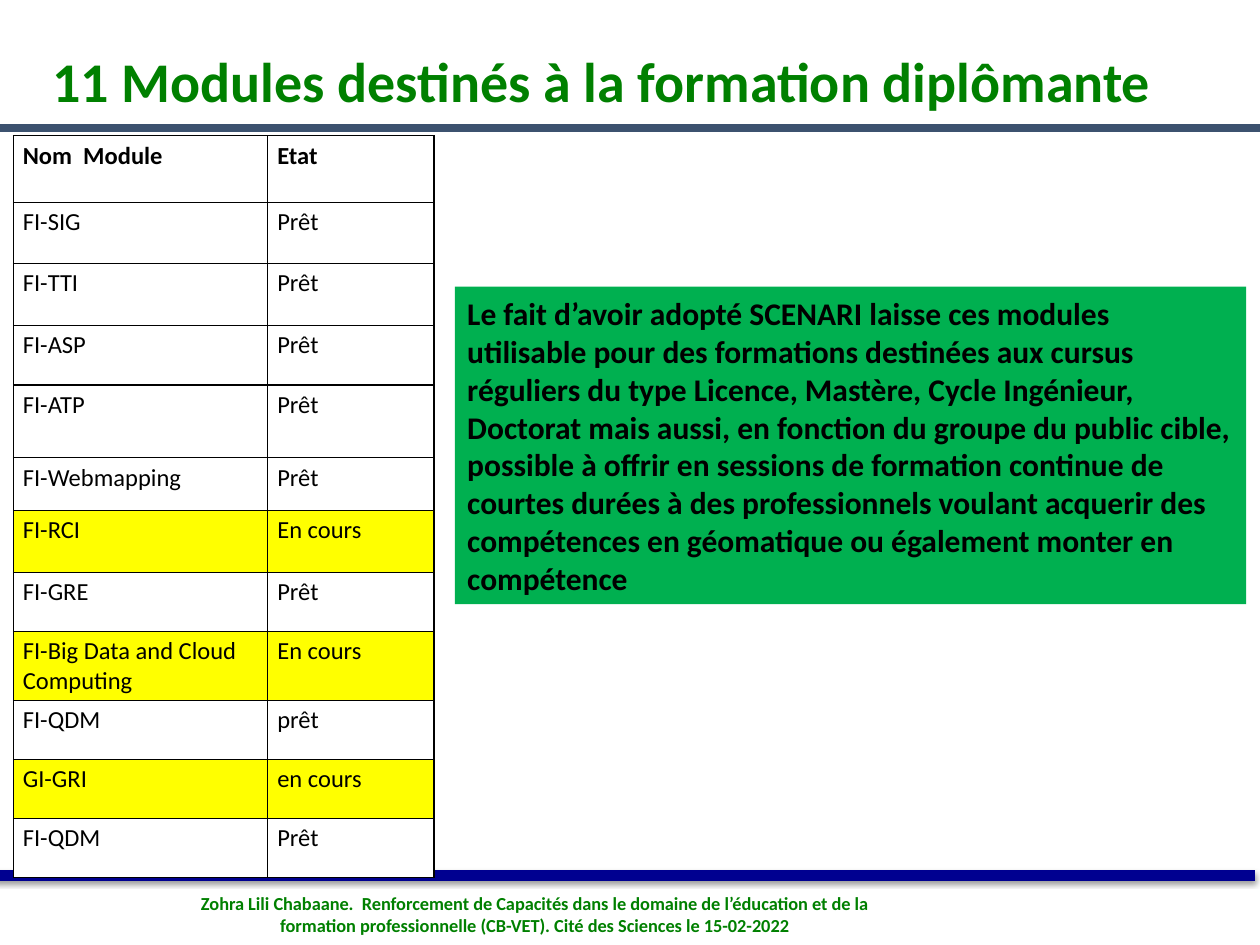
from typing import NamedTuple

from lxml import etree
from pptx import Presentation
from pptx.dml.color import RGBColor
from pptx.enum.shapes import MSO_CONNECTOR, MSO_SHAPE
from pptx.enum.text import MSO_ANCHOR, PP_ALIGN
from pptx.oxml import parse_xml
from pptx.oxml.ns import nsdecls, qn
from pptx.util import Cm, Pt

STRAIGHT = MSO_CONNECTOR.STRAIGHT
RECTANGLE = MSO_SHAPE.RECTANGLE
LEFT, CENTER = PP_ALIGN.LEFT, PP_ALIGN.CENTER
TOP, MIDDLE = MSO_ANCHOR.TOP, MSO_ANCHOR.MIDDLE

BLACK = RGBColor(0x00, 0x00, 0x00)
WHITE = RGBColor(0xFF, 0xFF, 0xFF)
YELLOW = RGBColor(0xFF, 0xFF, 0x00)
DARK_GREEN = RGBColor(0x00, 0x80, 0x00)
BOX_GREEN = RGBColor(0x00, 0xB0, 0x50)
NAVY = RGBColor(0x00, 0x00, 0x90)
SLATE = RGBColor(0x3C, 0x52, 0x6F)

FONT = "Calibri"
COLUMN_WIDTHS = (5.13, 3.35)

TITLE = "11 Modules destinés à la formation diplômante"
FOOTER = (
    "Zohra Lili Chabaane.  Renforcement de Capacités dans le domaine de l’éducation "
    "et de la formation professionnelle (CB-VET). Cité des Sciences le 15-02-2022"
)
MESSAGE = (
    "Le fait d’avoir adopté SCENARI laisse ces modules utilisable pour des formations "
    "destinées aux cursus réguliers du type Licence, Mastère, Cycle Ingénieur, Doctorat "
    "mais aussi, en fonction du groupe du public cible, possible à offrir en sessions de "
    "formation continue de courtes durées à des professionnels voulant acquerir des "
    "compétences en géomatique ou également monter en compétence"
)


class Row(NamedTuple):
    name: str
    state: str
    height: float
    fill: RGBColor | None = None
    bold: bool = False


class Rule(NamedTuple):
    left: float
    right: float
    top: float
    width: float
    color: RGBColor
    shadow: bool = False


ROWS = (
    Row("Nom  Module", "Etat", 1.34, bold=True),
    Row("FI-SIG", "Prêt", 1.23),
    Row("FI-TTI", "Prêt", 1.25),
    Row("FI-ASP", "Prêt", 1.2),
    Row("FI-ATP", "Prêt", 1.47),
    Row("FI-Webmapping", "Prêt", 1.06),
    Row("FI-RCI", "En cours", 1.25, YELLOW),
    Row("FI-GRE", "Prêt", 1.19),
    Row("FI-Big Data and Cloud Computing", "En cours", 1.19, YELLOW),
    Row("FI-QDM", "prêt", 1.19),
    Row("GI-GRI", "en cours", 1.19, YELLOW),
    Row("FI-QDM", "Prêt", 1.19, WHITE),
)
FOOTER_RULE = Rule(-0.1, 25.3, 17.65, 6, NAVY, shadow=True)
TITLE_RULE = Rule(0, 25.4, 2.58, 4.5, SLATE)


def write_text(text_frame, text: str, *, size: float, color: RGBColor = BLACK,
               bold: bool = True, align=LEFT, anchor=None) -> None:
    text_frame.word_wrap = True
    if anchor is not None:
        text_frame.vertical_anchor = anchor
    paragraph = text_frame.paragraphs[0]
    paragraph.alignment = align
    run = paragraph.add_run()
    run.text = text
    run.font.name = FONT
    run.font.size = Pt(size)
    run.font.bold = bold
    run.font.color.rgb = color


def add_text_box(slide, left: float, top: float, width: float, height: float,
                 text: str, **text_format) -> None:
    text_box = slide.shapes.add_textbox(Cm(left), Cm(top), Cm(width), Cm(height))
    write_text(text_box.text_frame, text, **text_format)


def add_rule(slide, rule: Rule) -> None:
    connector = slide.shapes.add_connector(
        STRAIGHT, Cm(rule.left), Cm(rule.top), Cm(rule.right), Cm(rule.top))
    connector.line.color.rgb = rule.color
    connector.line.width = Pt(rule.width)
    effects = etree.SubElement(connector._element.spPr, qn("a:effectLst"))
    if rule.shadow:
        effects.append(parse_xml(
            f'<a:outerShdw {nsdecls("a")} blurRad="{Pt(3.1)}" dist="{Pt(1.6)}" '
            'dir="5400000" rotWithShape="0"><a:srgbClr val="000000">'
            '<a:alpha val="38000"/></a:srgbClr></a:outerShdw>'))


def add_borders(cell) -> None:
    properties = cell._tc.get_or_add_tcPr()
    for index, side in enumerate(("lnL", "lnR", "lnT", "lnB")):
        properties.insert(index, parse_xml(
            f'<a:{side} {nsdecls("a")} w="{Pt(0.75)}"><a:solidFill>'
            f'<a:srgbClr val="{BLACK}"/></a:solidFill></a:{side}>'))


def fill_cell(cell, text: str, row: Row) -> None:
    cell.margin_left = cell.margin_right = Cm(0.19)
    cell.margin_top = cell.margin_bottom = Cm(0.1)
    cell.vertical_anchor = TOP
    if row.fill is None:
        cell.fill.background()
    else:
        cell.fill.solid()
        cell.fill.fore_color.rgb = row.fill
    add_borders(cell)
    write_text(cell.text_frame, text, size=14, bold=row.bold)


def add_module_table(slide) -> None:
    frame = slide.shapes.add_table(
        len(ROWS), len(COLUMN_WIDTHS), Cm(0.27), Cm(2.74),
        Cm(sum(COLUMN_WIDTHS)), Cm(sum(row.height for row in ROWS)))
    table = frame.table
    table.first_row = False
    table.horz_banding = False
    for column, width in zip(table.columns, COLUMN_WIDTHS):
        column.width = Cm(width)
    for table_row, row in zip(table.rows, ROWS):
        table_row.height = Cm(row.height)
        for cell, text in zip(table_row.cells, (row.name, row.state)):
            fill_cell(cell, text, row)


def add_message(slide) -> None:
    shape = slide.shapes.add_shape(RECTANGLE, Cm(9.17), Cm(5.78), Cm(15.95), Cm(6.4))
    shape.shadow.inherit = False
    shape.fill.solid()
    shape.fill.fore_color.rgb = BOX_GREEN
    shape.line.fill.background()
    write_text(shape.text_frame, MESSAGE, size=18, anchor=MIDDLE)


def main() -> None:
    presentation = Presentation()
    presentation.slide_width = Cm(25.4)
    presentation.slide_height = Cm(19.05)
    slide = presentation.slides.add_slide(presentation.slide_layouts[6])
    add_rule(slide, FOOTER_RULE)
    add_text_box(slide, 3.7, 17.86, 14.17, 1.98, FOOTER,
                 size=10.5, color=DARK_GREEN, align=CENTER)
    add_module_table(slide)
    add_text_box(slide, 0.8, 0.81, 23.67, 1.62, TITLE, size=32, color=DARK_GREEN)
    add_rule(slide, TITLE_RULE)
    add_message(slide)
    presentation.save("out.pptx")


if __name__ == "__main__":
    main()
